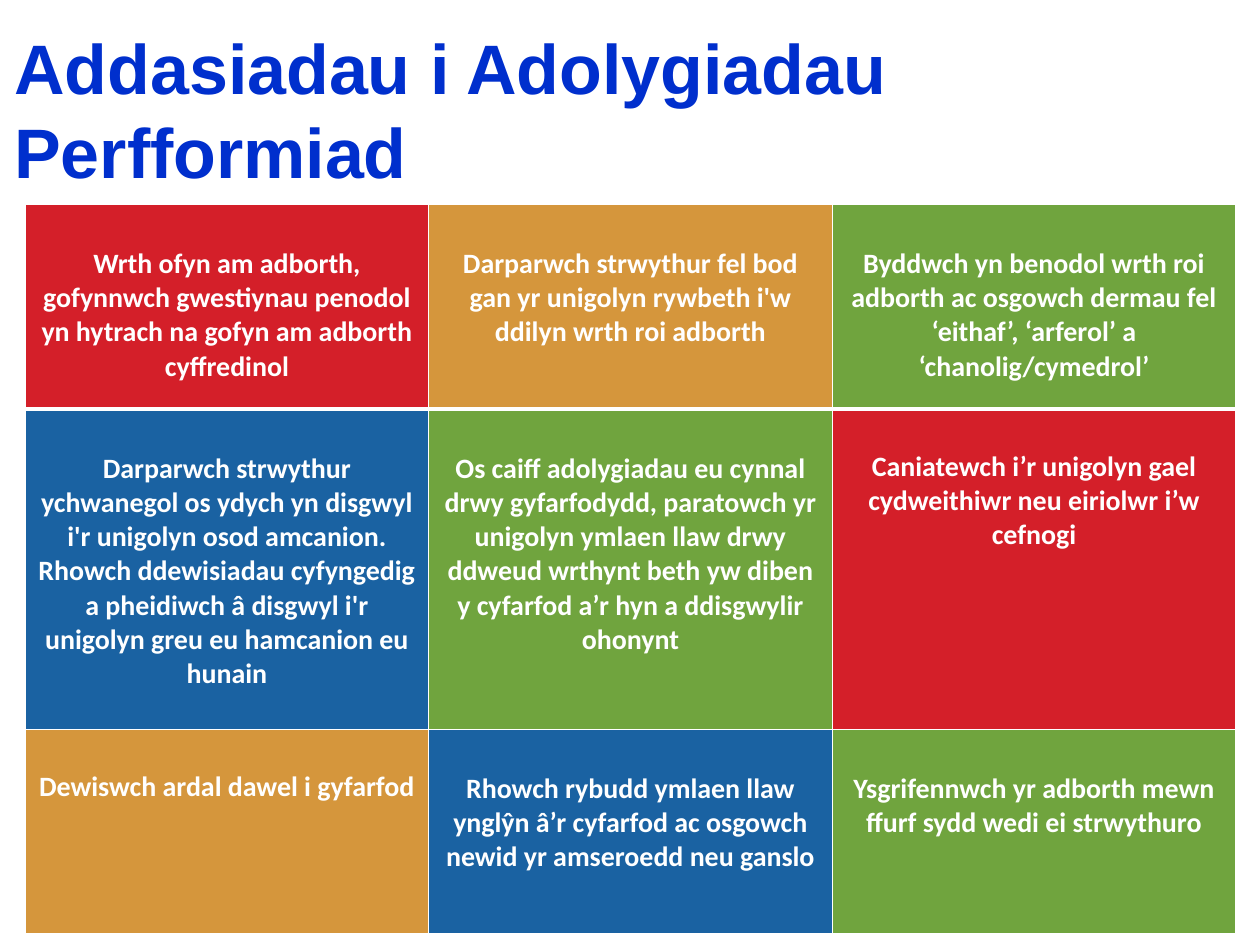
import pptx
import pptx.util
import pptx.dml.color
import pptx.enum.text
import pptx.oxml
import pptx.oxml.ns

Pt = pptx.util.Pt
RGBColor = pptx.dml.color.RGBColor
PP_ALIGN = pptx.enum.text.PP_ALIGN
MSO_ANCHOR = pptx.enum.text.MSO_ANCHOR

TITLE_BLUE = RGBColor(0x00, 0x2F, 0xCD)
WHITE = RGBColor(0xFF, 0xFF, 0xFF)
RED = RGBColor(0xD4, 0x1F, 0x29)
AMBER = RGBColor(0xD5, 0x96, 0x3C)
GREEN = RGBColor(0x70, 0xA4, 0x3E)
BLUE = RGBColor(0x1A, 0x62, 0xA2)

TITLE = "Addasiadau i Adolygiadau Perfformiad"
ROW_HEIGHTS = [117, 183, 117]
RULE_WIDTHS = [1, 3, 1, 1]  # horizontal rules, top to bottom
HIGH, LOW = 23, 24.25  # space above the text of a cell

ADJUSTMENTS = [
    [
        ("Wrth ofyn am adborth, gofynnwch gwestiynau penodol yn hytrach "
         "na gofyn am adborth cyffredinol", RED, LOW),
        ("Darparwch strwythur fel bod gan yr unigolyn rywbeth i'w ddilyn "
         "wrth roi adborth", AMBER, LOW),
        ("Byddwch yn benodol wrth roi adborth ac osgowch dermau fel "
         "‘eithaf’, ‘arferol’ a ‘chanolig/cymedrol’", GREEN, LOW),
    ],
    [
        ("Darparwch strwythur ychwanegol os ydych yn disgwyl i'r unigolyn "
         "osod amcanion. Rhowch ddewisiadau cyfyngedig a pheidiwch â "
         "disgwyl i'r unigolyn greu eu hamcanion eu hunain", BLUE, LOW),
        ("Os caiff adolygiadau eu cynnal drwy gyfarfodydd, paratowch yr "
         "unigolyn ymlaen llaw drwy ddweud wrthynt beth yw diben y cyfarfod "
         "a’r hyn a ddisgwylir ohonynt", GREEN, LOW),
        ("Caniatewch i’r unigolyn gael cydweithiwr neu eiriolwr i’w cefnogi",
         RED, HIGH),
    ],
    [
        ("Dewiswch ardal dawel i gyfarfod", AMBER, HIGH),
        ("Rhowch rybudd ymlaen llaw ynglŷn â’r cyfarfod ac osgowch newid yr "
         "amseroedd neu ganslo", BLUE, LOW),
        ("Ysgrifennwch yr adborth mewn ffurf sydd wedi ei strwythuro",
         GREEN, LOW),
    ],
]


def write_text(text_frame, text, *, font, size, color, align, line_spacing=None):
    text_frame.word_wrap = True
    paragraph = text_frame.paragraphs[0]
    paragraph.alignment = align
    paragraph.line_spacing = line_spacing
    run = paragraph.add_run()
    run.text = text
    run.font.name = font
    run.font.size = Pt(size)
    run.font.bold = True
    run.font.color.rgb = color


def set_borders(cell, **widths):
    properties = cell._tc.get_or_add_tcPr()
    for side, width in widths.items():
        properties.append(pptx.oxml.parse_xml(
            f'<a:ln{side} {pptx.oxml.ns.nsdecls("a")} w="{Pt(width)}">'
            f'<a:solidFill><a:srgbClr val="{WHITE}"/></a:solidFill></a:ln{side}>'))


def place_title(slide, left, top, width, height):
    title = slide.shapes.title
    title.left, title.top = Pt(left), Pt(top)
    title.width, title.height = Pt(width), Pt(height)
    title.text_frame.auto_size = pptx.enum.text.MSO_AUTO_SIZE.NONE
    title.text_frame.vertical_anchor = MSO_ANCHOR.MIDDLE
    write_text(title.text_frame, TITLE, font="Arial", size=40,
               color=TITLE_BLUE, align=PP_ALIGN.LEFT, line_spacing=Pt(48))


def place_adjustments(slide, left, top, width):
    column_count = len(ADJUSTMENTS[0])
    table = slide.shapes.add_table(
        len(ADJUSTMENTS), column_count, Pt(left), Pt(top),
        Pt(width), Pt(sum(ROW_HEIGHTS))).table
    table.first_row = False
    table.horz_banding = False
    for column in table.columns:
        column.width = Pt(width / column_count)

    for row_index, row in enumerate(ADJUSTMENTS):
        table.rows[row_index].height = Pt(ROW_HEIGHTS[row_index])
        for column_index, (text, fill, space_above) in enumerate(row):
            cell = table.cell(row_index, column_index)
            cell.margin_top = Pt(space_above)
            cell.vertical_anchor = MSO_ANCHOR.TOP
            set_borders(cell, L=1, R=1, T=RULE_WIDTHS[row_index],
                        B=RULE_WIDTHS[row_index + 1])
            cell.fill.solid()
            cell.fill.fore_color.rgb = fill
            write_text(cell.text_frame, text, font="Calibri", size=16,
                       color=WHITE, align=PP_ALIGN.CENTER)


def main():
    presentation = pptx.Presentation()
    presentation.slide_width, presentation.slide_height = Pt(720), Pt(540)
    slide = presentation.slides.add_slide(presentation.slide_layouts[5])
    # Heading across the top
    place_title(slide, 1, 10, 719, 104.4)
    # Coloured grid of adjustments
    place_adjustments(slide, 14.4, 116.8, 691.8)
    presentation.save("out.pptx")


if __name__ == "__main__":
    main()
